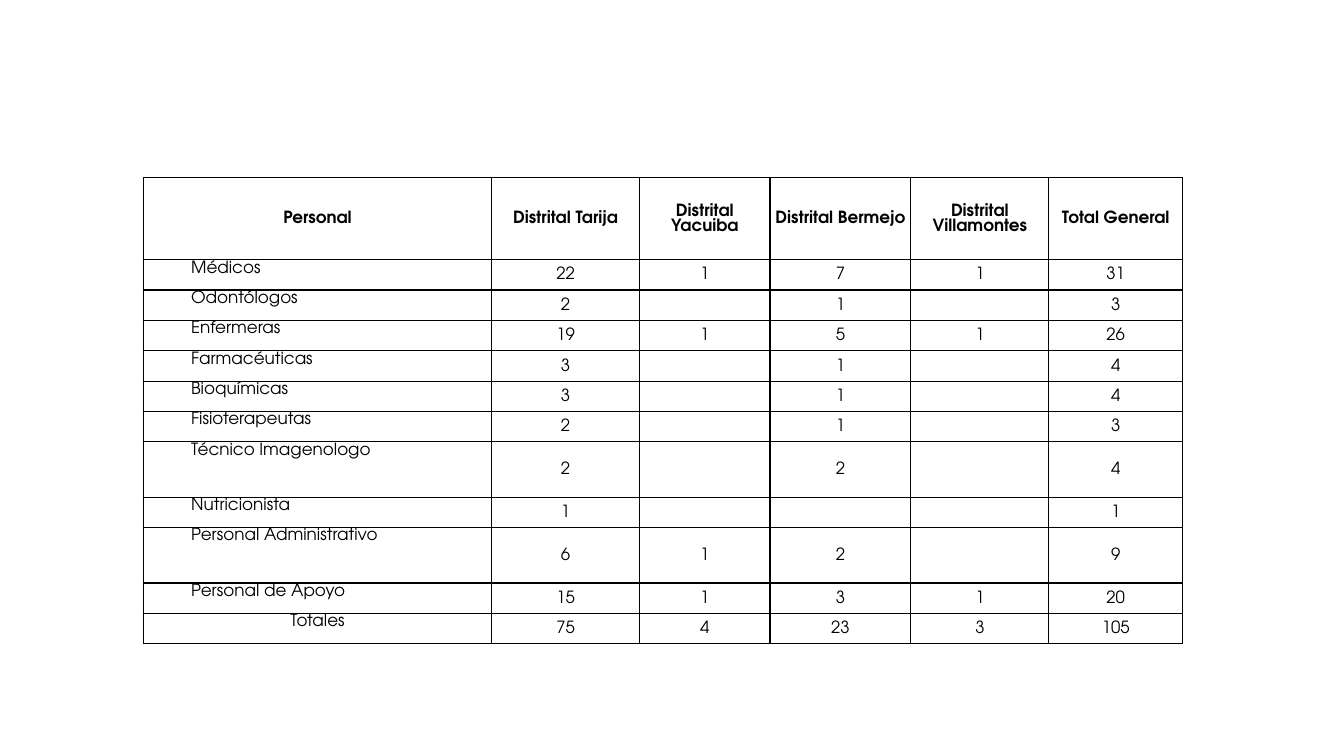
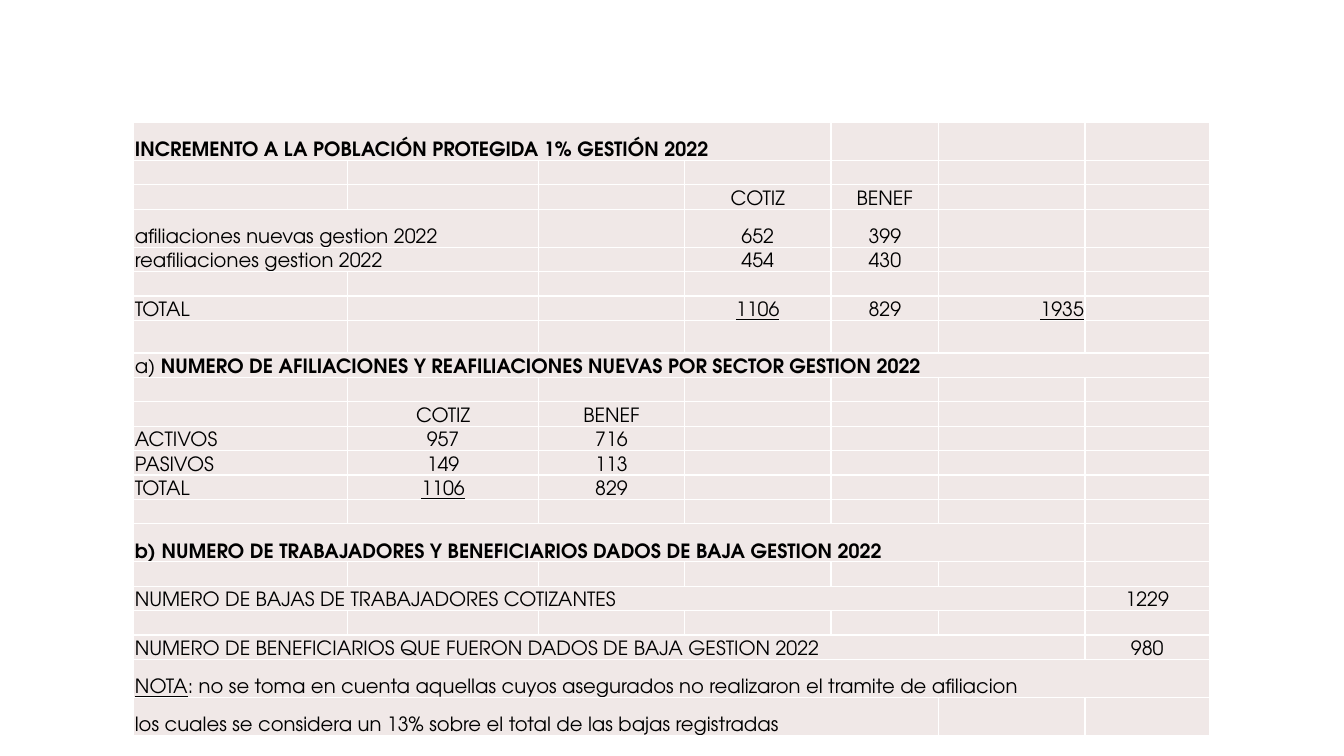
import dataclasses

import pptx
import pptx.dml.color
import pptx.enum.text
import pptx.oxml
import pptx.oxml.ns
import pptx.util

Pt = pptx.util.Pt
RGBColor = pptx.dml.color.RGBColor
Align = pptx.enum.text.PP_ALIGN
Anchor = pptx.enum.text.MSO_ANCHOR

BLACK = RGBColor(0x00, 0x00, 0x00)
WHITE = RGBColor(0xFF, 0xFF, 0xFF)
ROSE = RGBColor(0xF0, 0xE8, 0xE7)
FONT = "TeX Gyre Adventor"
INSET = 0.7
NAME_INDENT = 34

STAFF_BOX = (102.5, 127, 742.3, 333)
STAFF_COLUMNS = [248.6, 105.8, 93.2, 100.6, 98.6, 95.5]
HEADER_ROW, STAFF_ROW, TALL_STAFF_ROW = 58.5, 21.7, 39.6
TALL_STAFF = {"Técnico Imagenologo", "Personal Administrativo"}
STAFF_HEADER = ["Personal", "Distrital Tarija", "Distrital Yacuiba", "Distrital Bermejo",
                "Distrital Villamontes", "Total General"]
STAFF = [
    ["Médicos", "22", "1", "7", "1", "31"],
    ["Odontólogos", "2", "", "1", "", "3"],
    ["Enfermeras", "19", "1", "5", "1", "26"],
    ["Farmacéuticas", "3", "", "1", "", "4"],
    ["Bioquímicas", "3", "", "1", "", "4"],
    ["Fisioterapeutas", "2", "", "1", "", "3"],
    ["Técnico Imagenologo", "2", "", "2", "", "4"],
    ["Nutricionista", "1", "", "", "", "1"],
    ["Personal Administrativo", "6", "1", "2", "", "9"],
    ["Personal de Apoyo", "15", "1", "3", "1", "20"],
    ["Totales", "75", "4", "23", "3", "105"],
]

POPULATION_BOX = (95.6, 87.4, 768.4, 438)
POPULATION_COLUMNS = [152.8, 136.2, 104.4, 104.6, 77, 104.4, 89]
LOW, MEDIUM, HIGH = 17.45, 23.2, 27.2


@dataclasses.dataclass
class Entry:
    """Runs are (text, style) pairs; style may hold b for bold and u for underline."""
    column: int
    runs: list
    align: Align = Align.CENTER
    span: int = 1


def label(text, span=1, style=""):
    return Entry(0, [(text, style)], Align.LEFT, span)


def figures(first_column, *values):
    return [Entry(first_column + i, [(value, "")]) for i, value in enumerate(values)]


POPULATION = [
    (HIGH, [label("INCREMENTO A LA POBLACIÓN PROTEGIDA 1% GESTIÓN 2022", 4, "b")]),
    (LOW, []),
    (LOW, figures(3, "COTIZ", "BENEF")),
    (HIGH, [label("afiliaciones nuevas gestion 2022", 2), *figures(3, "652", "399")]),
    (LOW, [label("reafiliaciones gestion 2022", 2), *figures(3, "454", "430")]),
    (LOW, []),
    (LOW, [label("TOTAL"), Entry(3, [("1106", "u")]), *figures(4, "829"),
           Entry(5, [("1935", "u")], Align.RIGHT)]),
    (MEDIUM, []),
    (LOW, [Entry(0, [("a) ", ""),
                     ("NUMERO DE AFILIACIONES Y REAFILIACIONES NUEVAS POR SECTOR GESTION 2022", "b")],
                 Align.LEFT, 7)]),
    (LOW, []),
    (LOW, figures(1, "COTIZ", "BENEF")),
    (LOW, [label("ACTIVOS"), *figures(1, "957", "716")]),
    (LOW, [label("PASIVOS"), *figures(1, "149", "113")]),
    (LOW, [label("TOTAL"), Entry(1, [("1106", "u")]), *figures(2, "829")]),
    (LOW, []),
    (HIGH, [label("b) NUMERO DE TRABAJADORES Y BENEFICIARIOS DADOS DE BAJA GESTION 2022", 6, "b")]),
    (LOW, []),
    (LOW, [label("NUMERO DE BAJAS DE TRABAJADORES COTIZANTES", 6), *figures(6, "1229")]),
    (LOW, []),
    (LOW, [label("NUMERO DE BENEFICIARIOS QUE FUERON DADOS DE BAJA GESTION 2022", 6),
           *figures(6, "980")]),
    (HIGH, [Entry(0, [("NOTA", "u"),
                      (": no se toma en cuenta aquellas cuyos asegurados no realizaron "
                       "el tramite de afiliacion", "")], Align.LEFT, 7)]),
    (HIGH, [label("los cuales se considera un 13% sobre el total de las bajas registradas", 5)]),
]


def border_cell(cell, color):
    properties = cell._tc.get_or_add_tcPr()
    for side in ("lnL", "lnR", "lnT", "lnB"):
        properties.append(pptx.oxml.parse_xml(
            f'<a:{side} {pptx.oxml.ns.nsdecls("a")} w="{Pt(1)}"><a:solidFill>'
            f'<a:srgbClr val="{color}"/></a:solidFill></a:{side}>'))


def size_empty_cell(cell, size):
    """Keep the default text size from stretching a row without text."""
    cell.text_frame.paragraphs[0]._p.append(pptx.oxml.parse_xml(
        f'<a:endParaRPr {pptx.oxml.ns.nsdecls("a")} sz="{size * 100}">'
        f'<a:latin typeface="{FONT}"/></a:endParaRPr>'))


def add_grid(slide, box, widths, heights, border, size, fill=None):
    frame = slide.shapes.add_table(len(heights), len(widths), *map(Pt, box))
    grid = frame.table
    grid.first_row = grid.horz_banding = False
    for column, width in zip(grid.columns, widths):
        column.width = Pt(width)
    for row, height in zip(grid.rows, heights):
        row.height = Pt(height)
    for cell in grid.iter_cells():
        border_cell(cell, border)
        if fill is None:
            cell.fill.background()
        else:
            cell.fill.solid()
            cell.fill.fore_color.rgb = fill
        cell.margin_left = cell.margin_right = cell.margin_top = Pt(INSET)
        cell.margin_bottom = 0
        size_empty_cell(cell, size)
    return grid


def write_cell(cell, runs, size, align, anchor):
    cell.vertical_anchor = anchor
    paragraph = cell.text_frame.paragraphs[0]
    paragraph.alignment = align
    for text, style in runs:
        run = paragraph.add_run()
        run.text = text
        run.font.name = FONT
        run.font.size = Pt(size)
        run.font.color.rgb = BLACK
        run.font.bold = "b" in style
        run.font.underline = "u" in style


def staff_slide(slide, box):
    heights = [HEADER_ROW] + [TALL_STAFF_ROW if row[0] in TALL_STAFF else STAFF_ROW
                              for row in STAFF]
    grid = add_grid(slide, box, STAFF_COLUMNS, heights, BLACK, 12)
    for r, row in enumerate([STAFF_HEADER] + STAFF):
        for c, text in enumerate(row):
            if not text:
                continue
            cell = grid.cell(r, c)
            is_name = c == 0 and r > 0
            indented = is_name and text != "Totales"
            if indented:
                cell.margin_left = Pt(NAME_INDENT)
            write_cell(cell, [(text, "" if r else "b")], 12,
                       Align.LEFT if indented else Align.CENTER,
                       Anchor.TOP if is_name else Anchor.MIDDLE)


def population_slide(slide, box):
    heights = [height for height, _ in POPULATION]
    grid = add_grid(slide, box, POPULATION_COLUMNS, heights, WHITE, 14, ROSE)
    for r, (_, entries) in enumerate(POPULATION):
        for entry in entries:
            cell = grid.cell(r, entry.column)
            if entry.span > 1:
                cell.merge(grid.cell(r, entry.column + entry.span - 1))
            write_cell(cell, entry.runs, 14, entry.align, Anchor.BOTTOM)


def main():
    deck = pptx.Presentation()
    deck.slide_width, deck.slide_height = Pt(960), Pt(540)
    blank = deck.slide_layouts[6]
    staff_slide(deck.slides.add_slide(blank), STAFF_BOX)
    population_slide(deck.slides.add_slide(blank), POPULATION_BOX)
    deck.save("out.pptx")


if __name__ == "__main__":
    main()
